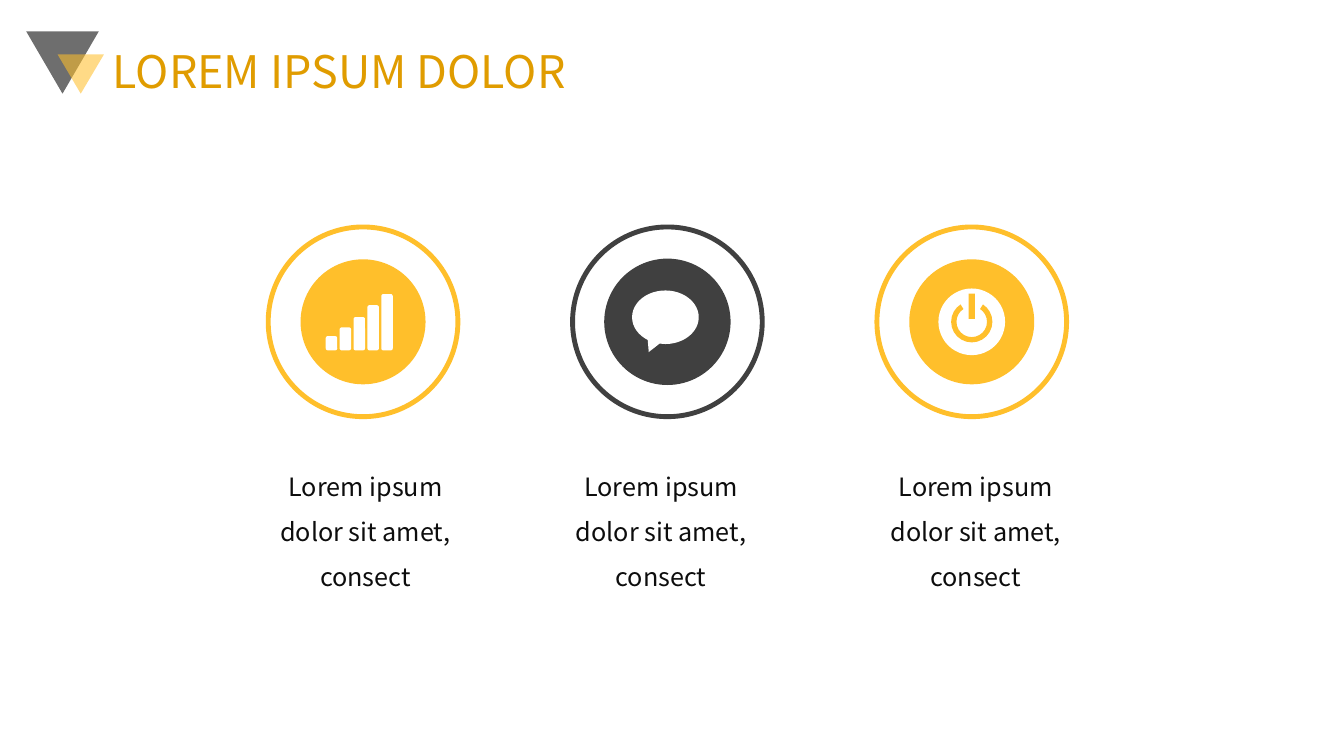
from dataclasses import dataclass

from lxml.etree import SubElement
from pptx import Presentation
from pptx.dml.color import RGBColor
from pptx.enum.shapes import MSO_SHAPE as SHAPE
from pptx.enum.text import MSO_ANCHOR as ANCHOR, MSO_AUTO_SIZE as FIT, PP_ALIGN as ALIGN
from pptx.oxml.ns import qn
from pptx.util import Cm, Pt


@dataclass(frozen=True)
class Theme:
    """Colours, type sizes and font of the slide."""
    black: str = "000000"
    white: str = "FFFFFF"
    amber: str = "FFBF2B"
    gold: str = "E09C00"
    charcoal: str = "404040"
    ink: str = "0D0D0D"
    font: str = "Noto Sans CJK JP"
    title_size: int = 32
    caption_size: int = 18


THEME = Theme()


def apply(obj, formats):
    """Set every attribute named in a dict of format values."""
    for name, value in formats.items():
        setattr(obj, name, value)


def add_part(shapes, kind, box, fill=None, line=None, weight=1, alpha=None, adjust=()):
    """Add a preset shape to a box in cm, with flat fill and line."""
    s = shapes.add_shape(kind, *[Cm(v) for v in box])
    s.shadow.inherit = False
    for i, value in enumerate(adjust):
        s.adjustments[i] = value
    if fill:
        s.fill.solid()
        s.fill.fore_color.rgb = RGBColor.from_string(fill)
    else:
        s.fill.background()
    if line:
        s.line.color.rgb = RGBColor.from_string(line)
        s.line.width = Pt(weight)
    else:
        s.line.fill.background()
    if alpha:
        color = s.fill._xPr.find(qn("a:solidFill"))[0]
        SubElement(color, qn("a:alpha"), val=str(alpha * 1000))
    return s


def add_circle(shapes, cx, cy, size, **style):
    """Add a circle around a centre point."""
    return add_part(shapes, SHAPE.OVAL, (cx - size / 2, cy - size / 2, size, size), **style)


def write(s, text, size, color, paragraph, frame):
    """Fill a shape with one formatted paragraph."""
    tf = s.text_frame
    apply(tf, {"word_wrap": True, "auto_size": FIT.NONE, **frame})
    p = tf.paragraphs[0]
    apply(p, paragraph)
    r = p.add_run()
    r.text = text
    apply(r.font, {"name": THEME.font, "size": Pt(size)})
    r.font.color.rgb = RGBColor.from_string(color)


def build_header(slide, left, top, width, height):
    """Place the two overlapping triangles and the title beside them."""
    shapes = slide.shapes.add_group_shape().shapes
    for box, color in (((left, top, 1.83, 1.57), THEME.black),
                       ((left + 0.79, top + 0.58, 1.17, 0.99), THEME.amber)):
        s = add_part(shapes, SHAPE.ISOSCELES_TRIANGLE, box, fill=color, alpha=57)
        s.rotation = 180
    indent = 1.93
    title = slide.shapes.title
    apply(title, {"left": Cm(left + indent), "top": Cm(top),
                  "width": Cm(width - indent), "height": Cm(height)})
    write(title, "LOREM IPSUM DOLOR", THEME.title_size, THEME.gold,
          {"alignment": ALIGN.LEFT, "line_spacing": 0.9},
          {"vertical_anchor": ANCHOR.MIDDLE})


def draw_bars(shapes, cx, cy, color):
    """Draw five rising signal bars around a centre point."""
    for i, height in enumerate((0.36, 0.58, 0.84, 1.14, 1.42)):
        add_part(shapes, SHAPE.ROUNDED_RECTANGLE,
                 (cx - 0.94 + 0.35 * i, cy + 0.72 - height, 0.29, height),
                 fill=THEME.white, adjust=(0.18,))


def draw_bubble(shapes, cx, cy, color):
    """Draw a plain speech bubble around a centre point."""
    add_part(shapes, SHAPE.OVAL_CALLOUT, (cx - 0.89, cy - 0.79, 1.68, 1.35),
             fill=THEME.white, adjust=(-0.25, 0.65))


def draw_power(shapes, cx, cy, color):
    """Draw a power button around a centre point."""
    add_circle(shapes, cx, cy, 1.68, fill=THEME.white)
    add_part(shapes, SHAPE.BLOCK_ARC, (cx - 0.52, cy - 0.52, 1.04, 1.04),
             fill=color, adjust=(303 * 0.6, 237 * 0.6, 0.13))
    add_part(shapes, SHAPE.RECTANGLE, (cx - 0.08, cy - 0.71, 0.16, 0.64), fill=color)


def build_badge(slide, left, top, size, color, edge, draw_icon):
    """Place a ring, its disc and its icon in a square box."""
    shapes = slide.shapes.add_group_shape().shapes
    cx, cy = left + size / 2, top + size / 2
    add_circle(shapes, cx, cy, size, line=color, weight=3.5)
    add_circle(shapes, cx, cy, 3.15, fill=color, line=edge)
    draw_icon(shapes, cx, cy, color)


def build_caption(slide, left, top, width, height):
    """Place the centred text under a badge."""
    s = slide.shapes.add_textbox(Cm(left), Cm(top), Cm(width), Cm(height))
    write(s, "Lorem ipsum dolor sit amet, consect", THEME.caption_size, THEME.ink,
          {"alignment": ALIGN.CENTER, "line_spacing": 1.5}, {})


def build_columns(slide, left, top, pitch, size):
    """Place the three badges in a row, each with its caption."""
    columns = ((THEME.amber, None, draw_bars, 0.06),
               (THEME.charcoal, THEME.charcoal, draw_bubble, -0.16),
               (THEME.amber, None, draw_power, 0.1))
    width = 6.07
    for i, (color, edge, draw_icon, shift) in enumerate(columns):
        x = left + i * pitch
        build_badge(slide, x, top, size, color, edge, draw_icon)
        build_caption(slide, x + (size - width) / 2 + shift, top + 5.64, width, 3.76)


def main():
    """Build and save the slide."""
    prs = Presentation()
    apply(prs, {"slide_width": Cm(33.87), "slide_height": Cm(19.05)})
    slide = prs.slides.add_slide(prs.slide_layouts[5])
    build_header(slide, 0.66, 0.79, 31.14, 2.16)
    build_columns(slide, 6.76, 5.72, 7.67, 4.78)
    prs.save("out.pptx")


if __name__ == "__main__":
    main()
